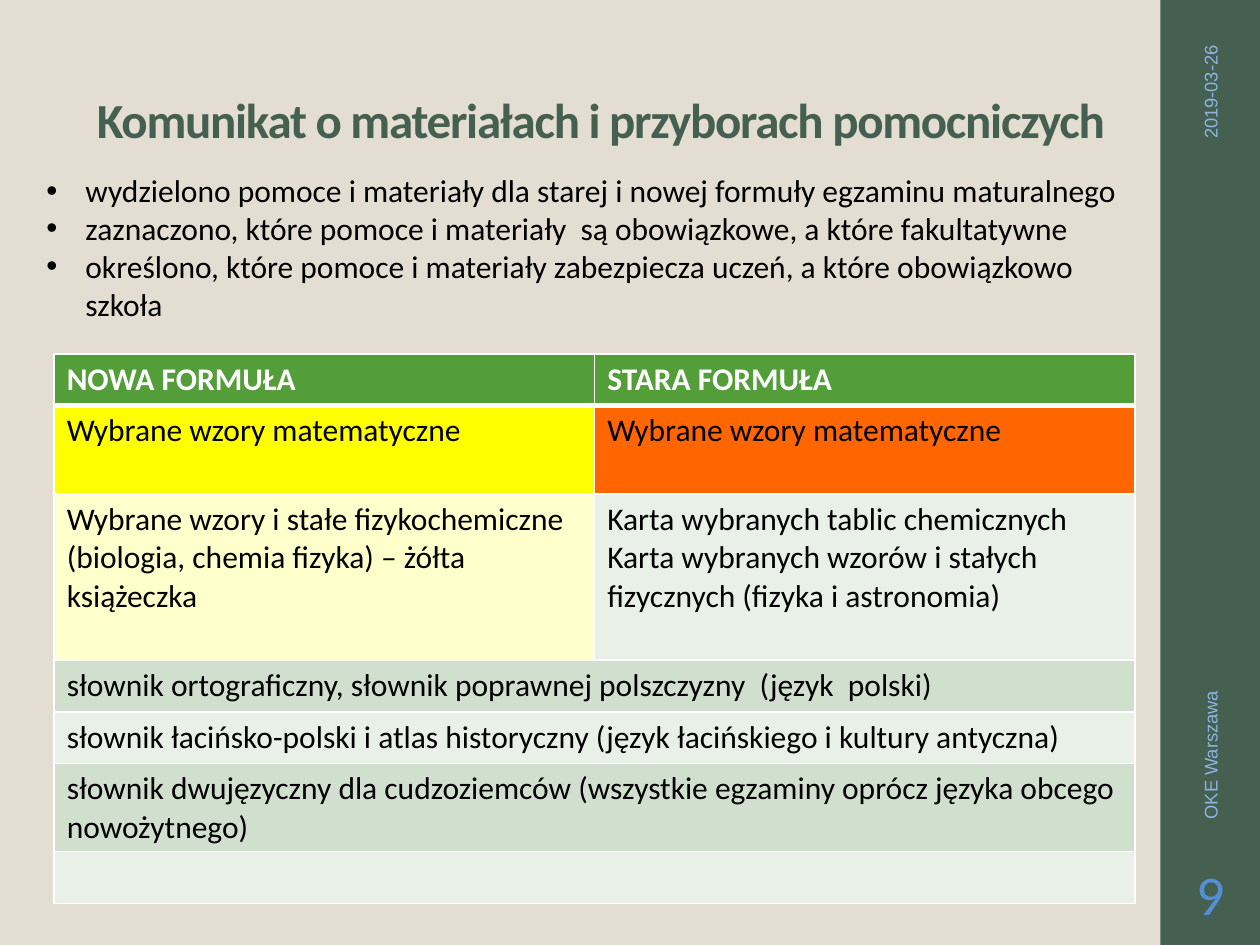
from dataclasses import dataclass

from lxml import etree
from pptx import Presentation
from pptx.dml.color import RGBColor
from pptx.enum.shapes import MSO_SHAPE
from pptx.enum.text import MSO_ANCHOR, PP_ALIGN
from pptx.oxml.ns import qn
from pptx.util import Inches, Pt

RECTANGLE = MSO_SHAPE.RECTANGLE
MIDDLE, BOTTOM = MSO_ANCHOR.MIDDLE, MSO_ANCHOR.BOTTOM
LEFT, CENTER, RIGHT = PP_ALIGN.LEFT, PP_ALIGN.CENTER, PP_ALIGN.RIGHT

SAND = RGBColor(0xE3, 0xDE, 0xD1)
DARK_GREEN = RGBColor(0x45, 0x5F, 0x51)
GREEN = RGBColor(0x54, 0x9E, 0x39)
YELLOW = RGBColor(0xFF, 0xFF, 0x00)
ORANGE = RGBColor(0xFF, 0x66, 0x00)
CREAM = RGBColor(0xFF, 0xFF, 0xCC)
PALE = RGBColor(0xE9, 0xF0, 0xE8)
SAGE = RGBColor(0xD1, 0xDF, 0xCE)
LIGHT_BLUE = RGBColor(0x8E, 0xB4, 0xE3)
BLUE = RGBColor(0x55, 0x8E, 0xD5)
BLACK = RGBColor(0, 0, 0)
WHITE = RGBColor(0xFF, 0xFF, 0xFF)

BULLETS = [
    "wydzielono pomoce i materiały dla starej i nowej formuły egzaminu maturalnego",
    "zaznaczono, które pomoce i materiały  są obowiązkowe, a które fakultatywne",
    "określono, które pomoce i materiały zabezpiecza uczeń, a które obowiązkowo szkoła",
]
ROWS = [
    (0.41, [("NOWA FORMUŁA", GREEN), ("STARA FORMUŁA", GREEN)]),
    (0.7, [("Wybrane wzory matematyczne", YELLOW), ("Wybrane wzory matematyczne", ORANGE)]),
    (1.32, [
        ("Wybrane wzory i stałe fizykochemiczne (biologia, chemia fizyka) – żółta książeczka", CREAM),
        ("Karta wybranych tablic chemicznych\n"
         "Karta wybranych wzorów i stałych fizycznych (fizyka i astronomia)", PALE),
    ]),
    (0.41, [("słownik ortograficzny, słownik poprawnej polszczyzny  (język  polski)", SAGE)]),
    (0.41, [("słownik łacińsko-polski i atlas historyczny (język łacińskiego i kultury antyczna)", PALE)]),
    (0.7, [("słownik dwujęzyczny dla cudzoziemców (wszystkie egzaminy oprócz języka "
            "obcego nowożytnego)", SAGE)]),
    (0.41, [("", PALE)]),
]


@dataclass
class Box:
    """A rectangle on the slide, in inches."""
    left: float
    top: float
    width: float
    height: float

    def lengths(self):
        """Return the four lengths for a shape call."""
        return [Inches(value) for value in (self.left, self.top, self.width, self.height)]


def style(paragraph, size, color, name="Calibri", bold=False, align=LEFT):
    """Set the font and alignment of a paragraph."""
    font = paragraph.font
    font.size, font.name, font.bold = Pt(size), name, bold
    font.color.rgb = color
    paragraph.alignment = align


def add_text(slide, box, text, anchor=None):
    """Add a wrapping text box and return its shape."""
    shape = slide.shapes.add_textbox(*box.lengths())
    frame = shape.text_frame
    frame.word_wrap = True
    frame.text = text
    if anchor is not None:
        frame.vertical_anchor = anchor
    return shape


def add_title(slide, box):
    """Place the tightly spaced heading at the foot of its box."""
    shape = add_text(slide, box, "Komunikat o materiałach i przyborach pomocniczych", BOTTOM)
    paragraph = shape.text_frame.paragraphs[0]
    paragraph.line_spacing = 0.9
    style(paragraph, 28, DARK_GREEN, bold=True)
    paragraph.runs[0].font._element.set("spc", "-70")


def add_bullets(slide, box):
    """Place the bulleted summary."""
    shape = add_text(slide, box, "\n".join(BULLETS))
    for paragraph in shape.text_frame.paragraphs:
        properties = paragraph._p.get_or_add_pPr()
        properties.set("marL", str(Inches(0.31)))
        properties.set("indent", str(-Inches(0.31)))
        etree.SubElement(properties, qn("a:buFont")).set("typeface", "Arial")
        etree.SubElement(properties, qn("a:buChar")).set("char", "•")
        style(paragraph, 18, BLACK)


def set_borders(cell, top, bottom):
    """Draw white cell borders with the given top and bottom widths."""
    properties = cell._tc.get_or_add_tcPr()
    for index, (side, width) in enumerate(zip("LRTB", (1, 1, top, bottom))):
        line = etree.Element(qn(f"a:ln{side}"), w=str(Pt(width)))
        fill = etree.SubElement(line, qn("a:solidFill"))
        etree.SubElement(fill, qn("a:srgbClr")).set("val", str(WHITE))
        properties.insert(index, line)


def add_aids_table(slide, box):
    """Place the table of aids, merging rows that hold one entry."""
    table = slide.shapes.add_table(len(ROWS), 2, *box.lengths()).table
    for column in table.columns:
        column.width = Inches(box.width / 2)
    for index, (height, entries) in enumerate(ROWS):
        table.rows[index].height = Inches(height)
        if len(entries) == 1:
            table.cell(index, 0).merge(table.cell(index, 1))
        for column in range(2):
            cell = table.cell(index, column)
            cell.fill.solid()
            cell.fill.fore_color.rgb = entries[min(column, len(entries) - 1)][1]
            set_borders(cell, 3 if index == 1 else 1, 3 if index == 0 else 1)
        for column, (text, _) in enumerate(entries):
            frame = table.cell(index, column).text_frame
            frame.text = text
            for paragraph in frame.paragraphs:
                style(paragraph, 18, BLACK if index else WHITE, bold=index == 0)


def add_sidebar(slide, box):
    """Place the side band with its date, footer and slide number."""
    band = slide.shapes.add_shape(RECTANGLE, *box.lengths())
    band.shadow.inherit = False
    band.fill.solid()
    band.fill.fore_color.rgb = DARK_GREEN
    band.line.fill.background()
    center = box.left + box.width / 2
    for text, middle, share, align in (
        ("2019-03-26", 0.17, 0.27, RIGHT),
        ("OKE Warszawa", 0.62, 0.52, LEFT),
    ):
        length, thickness = share * box.height, 0.04 * box.height
        label_box = Box(center - length / 2, box.top + middle * box.height - thickness / 2,
                        length, thickness)
        label = add_text(slide, label_box, text, MIDDLE)
        label.rotation = 270
        style(label.text_frame.paragraphs[0], 10.5, LIGHT_BLUE, "Arial", align=align)
    number_box = Box(box.left, box.top + 0.9 * box.height, box.width, 0.09 * box.height)
    number = add_text(slide, number_box, "9", MIDDLE)
    number.text_frame.margin_left = number.text_frame.margin_right = Inches(0.03)
    style(number.text_frame.paragraphs[0], 32, BLUE, align=CENTER)


def main():
    """Build and save the slide."""
    presentation = Presentation()
    presentation.slide_width, presentation.slide_height = Inches(10), Inches(7.5)
    slide = presentation.slides.add_slide(presentation.slide_layouts[6])
    slide.background.fill.solid()
    slide.background.fill.fore_color.rgb = SAND
    add_sidebar(slide, Box(9.21, 0, 0.79, 7.5))
    add_title(slide, Box(0.67, 0.4, 8.43, 0.83))
    add_aids_table(slide, Box(0.43, 2.81, 8.58, sum(height for height, _ in ROWS)))
    add_bullets(slide, Box(0.27, 1.31, 8.74, 1.31))
    presentation.save("out.pptx")


if __name__ == "__main__":
    main()
